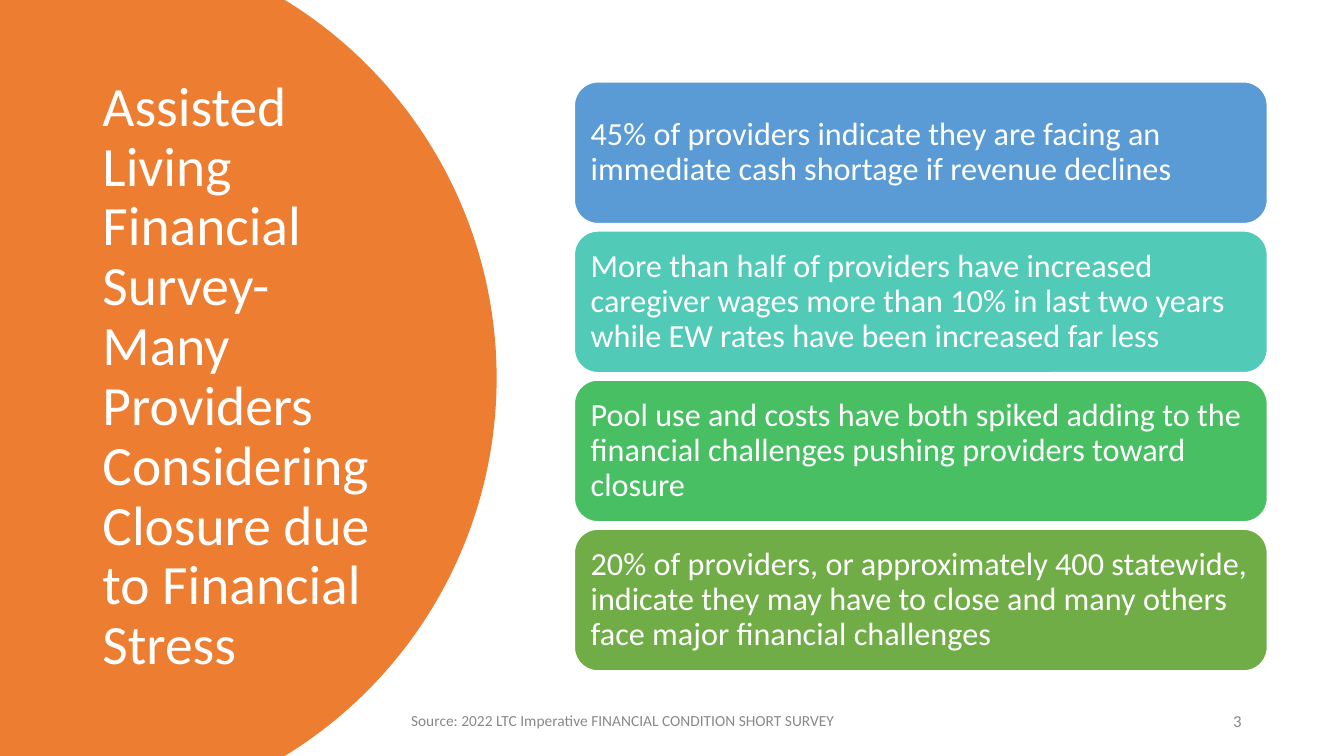
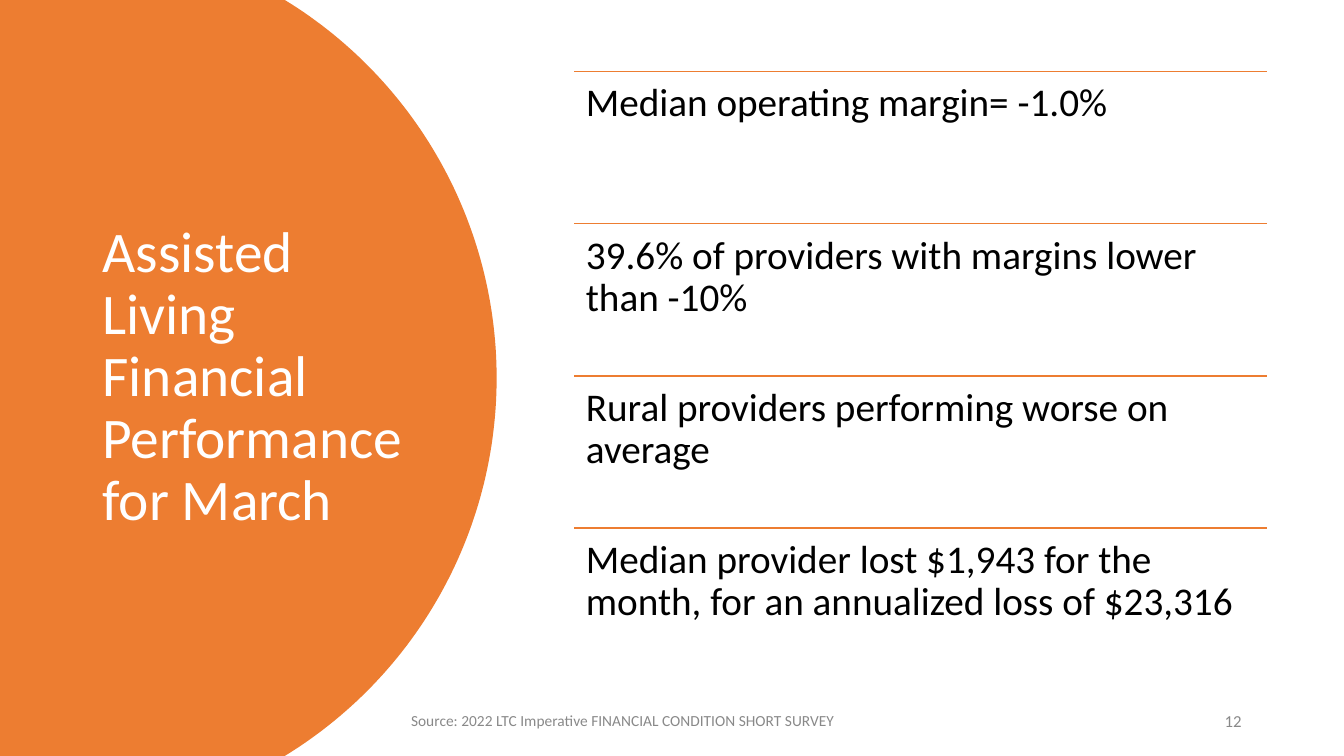
"""Build two survey slides with a curved title panel and a column of findings."""
import math

from lxml import etree
from pptx import Presentation
from pptx import util as u
from pptx.dml.color import RGBColor
from pptx.enum import shapes, text
from pptx.oxml.ns import qn

PX = 9525
FONT = "Calibri"
ORANGE = RGBColor(0xED, 0x7D, 0x31)
WHITE = RGBColor(0xFF, 0xFF, 0xFF)
BLACK = RGBColor(0x00, 0x00, 0x00)
GRAY = RGBColor(0x89, 0x89, 0x89)
BLUE = RGBColor(0x5B, 0x9B, 0xD5)
TEAL = RGBColor(0x52, 0xCA, 0xB8)
GREEN = RGBColor(0x49, 0xBF, 0x64)
OLIVE = RGBColor(0x70, 0xAD, 0x47)

SLIDE_WIDTH, SLIDE_HEIGHT = 1280, 720
ARC_CENTER, ARC_RADIUS, ARC_STEPS = 51, 422, 120
COLUMN_LEFT, COLUMN_WIDTH = 547, 660
CARD_TOP, CARD_HEIGHT, CARD_PITCH = 78, 135, 142
ROW_TOP, ROW_PITCH = 68, 145
SOURCE = "Source: 2022 LTC Imperative FINANCIAL CONDITION SHORT SURVEY"

CARDS = [
    (BLUE, "45% of providers indicate they are facing an immediate cash shortage "
           "if revenue declines"),
    (TEAL, "More than half of providers have increased caregiver wages more than 10% "
           "in last two years while EW rates have been increased far less"),
    (GREEN, "Pool use and costs have both spiked adding to the financial challenges "
            "pushing providers toward closure"),
    (OLIVE, "20% of providers, or approximately 400 statewide, indicate they may have "
            "to close and many others face major financial challenges"),
]
ROWS = [
    "Median operating margin= -1.0%",
    "39.6% of providers with margins lower than -10%",
    "Rural providers performing worse on average",
    "Median provider lost $1,943 for the month, for an annualized loss of $23,316",
]


def px(*lengths):
    return [u.Emu(length * PX) for length in lengths]


def write(shape, words, size, color, anchor=text.MSO_ANCHOR.MIDDLE,
          align=text.PP_ALIGN.LEFT, spacing=0.9, inset=None):
    frame = shape.text_frame
    frame.word_wrap = True
    frame.auto_size = text.MSO_AUTO_SIZE.NONE
    frame.vertical_anchor = anchor
    if inset is not None:
        frame.margin_left = frame.margin_right = u.Emu(inset * PX)
        frame.margin_top = frame.margin_bottom = u.Emu(inset * PX)
    frame.text = words
    paragraph = frame.paragraphs[0]
    paragraph.alignment = align
    paragraph.line_spacing = spacing
    paragraph.font.name = FONT
    paragraph.font.size = u.Pt(size)
    paragraph.font.color.rgb = color


def add_text(slide, box, words, size, color, **style):
    write(slide.shapes.add_textbox(*px(*box)), words, size, color, **style)


def add_panel(slide):
    middle = SLIDE_HEIGHT / 2
    reach = math.asin(middle / ARC_RADIUS)
    angles = [reach * (2 * step / ARC_STEPS - 1) for step in range(ARC_STEPS + 1)]
    arc = [((ARC_CENTER + ARC_RADIUS * math.cos(angle)) * PX,
            (middle + ARC_RADIUS * math.sin(angle)) * PX) for angle in angles]
    builder = slide.shapes.build_freeform(0, 0)
    builder.add_line_segments(arc + [(0, SLIDE_HEIGHT * PX)])
    panel = builder.convert_to_shape()
    panel.shadow.inherit = False
    panel.fill.solid()
    panel.fill.fore_color.rgb = ORANGE
    panel.line.fill.background()
    slide.shapes.title._element.addprevious(panel._element)


def add_base_slide(presentation, heading, size, number):
    slide = presentation.slides.add_slide(presentation.slide_layouts[5])
    add_panel(slide)
    title = slide.shapes.title
    title.left, title.top, title.width, title.height = px(88, 67, 310, 585)
    write(title, heading, size, WHITE)
    add_text(slide, (382, 667, 473, 38), SOURCE, 11, GRAY, spacing=1.0)
    add_text(slide, (904, 667, 288, 38), number, 12, GRAY,
             align=text.PP_ALIGN.RIGHT, spacing=1.0)
    return slide


def add_card(slide, top, color, words):
    card = slide.shapes.add_shape(shapes.MSO_SHAPE.ROUNDED_RECTANGLE,
                                  *px(COLUMN_LEFT, top, COLUMN_WIDTH, CARD_HEIGHT))
    card.shadow.inherit = False
    card.fill.solid()
    card.fill.fore_color.rgb = color
    card.line.color.rgb = WHITE
    card.line.width = u.Pt(1)
    write(card, words, 23, WHITE, inset=9)


def add_row(slide, top, words):
    rule = slide.shapes.add_connector(
        shapes.MSO_CONNECTOR.STRAIGHT,
        *px(COLUMN_LEFT, top, COLUMN_LEFT + COLUMN_WIDTH, top))
    rule.line.color.rgb = ORANGE
    rule.line.width = u.Pt(1)
    etree.SubElement(rule._element.spPr, qn("a:effectLst"))
    add_text(slide, (COLUMN_LEFT, top, COLUMN_WIDTH, ROW_PITCH), words, 28, BLACK,
             anchor=text.MSO_ANCHOR.TOP, inset=11)


def main():
    presentation = Presentation()
    presentation.slide_width, presentation.slide_height = px(SLIDE_WIDTH, SLIDE_HEIGHT)

    survey = add_base_slide(
        presentation,
        "Assisted Living Financial Survey- Many Providers Considering Closure "
        "due to Financial Stress", 39.6, "3")
    for index, (color, words) in enumerate(CARDS):
        add_card(survey, CARD_TOP + index * CARD_PITCH, color, words)

    performance = add_base_slide(
        presentation, "Assisted Living Financial Performance for March", 41, "12")
    for index, words in enumerate(ROWS):
        add_row(performance, ROW_TOP + index * ROW_PITCH, words)

    presentation.save("out.pptx")


if __name__ == "__main__":
    main()
